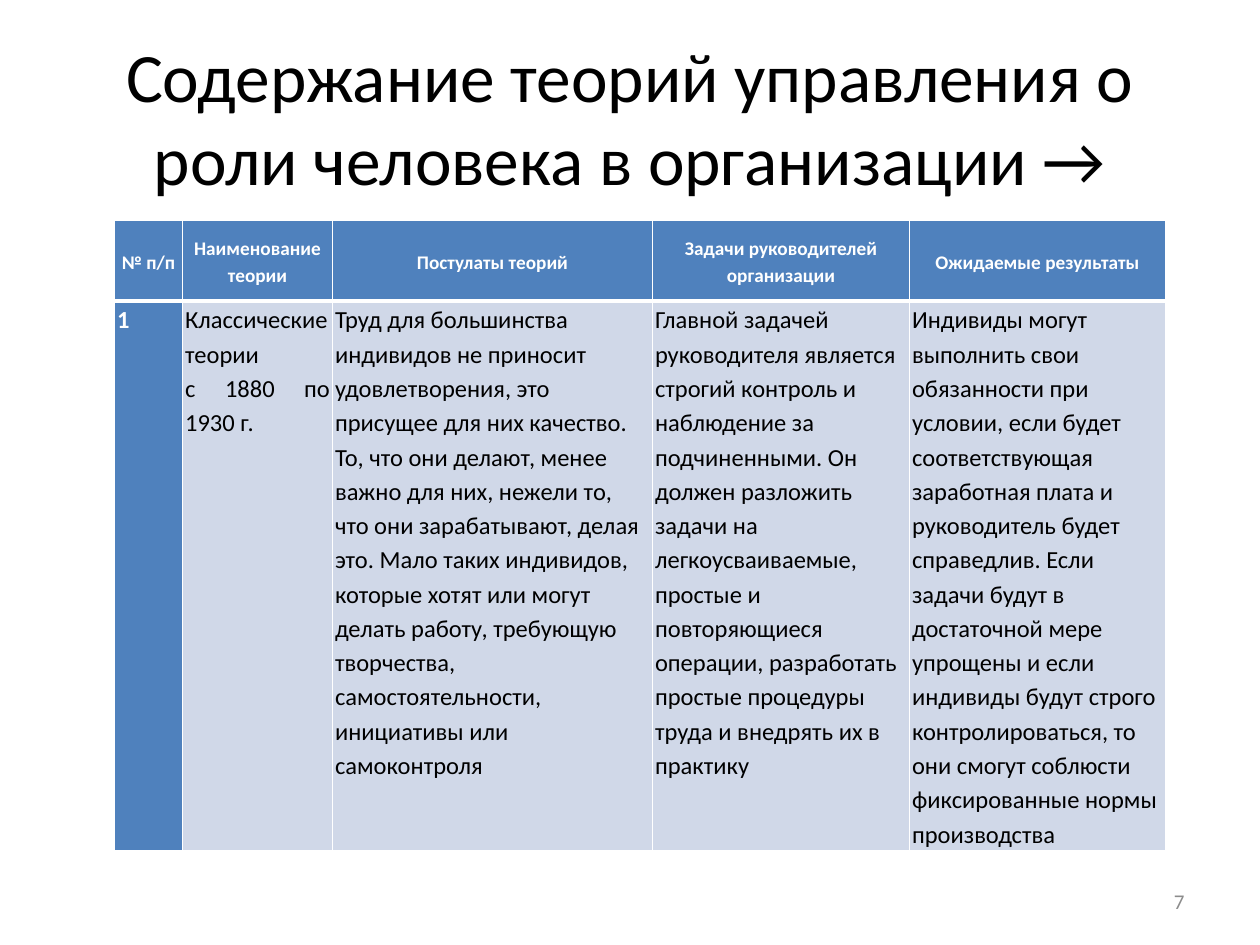
from dataclasses import dataclass

from lxml.etree import SubElement
from pptx import Presentation
from pptx.dml.color import RGBColor
from pptx.enum.text import MSO_ANCHOR, PP_ALIGN
from pptx.oxml.ns import qn
from pptx.slide import Slide
from pptx.table import _Cell
from pptx.text.text import TextFrame
from pptx.util import Inches, Pt

COLORS = {
    "white": "FFFFFF",
    "black": "000000",
    "blue": "4F81BD",
    "pale": "D0D8E8",
    "gray": "8C8C8C",
}
FONT = "Calibri"
WIDTH, HEIGHT = 10, 7.5
MARGIN = 0.05 * WIDTH
COLUMNS = [0.54, 1.19, 2.54, 2.04, 2.03]
ROWS = [0.64, 4.36]
CELL_INSET = 0.02


@dataclass(frozen=True)
class Style:
    size: float
    color: str
    align: PP_ALIGN
    anchor: MSO_ANCHOR = MSO_ANCHOR.MIDDLE
    bold: bool = False
    spacing: float = 1.0


@dataclass(frozen=True)
class CellSpec:
    text: str
    style: Style
    fill: str


TITLE = Style(39.6, "black", PP_ALIGN.CENTER)
NUMBER = Style(12, "gray", PP_ALIGN.RIGHT)
HEADER = Style(11, "white", PP_ALIGN.CENTER, bold=True, spacing=1.15)
INDEX = Style(14, "white", PP_ALIGN.JUSTIFY, MSO_ANCHOR.TOP, True, 1.15)
NAME = Style(14, "black", PP_ALIGN.JUSTIFY, MSO_ANCHOR.TOP, spacing=1.15)
BODY = Style(14, "black", PP_ALIGN.LEFT, MSO_ANCHOR.TOP, spacing=1.15)

HEADINGS = [
    "№ п/п",
    "Наименование теории",
    "Постулаты теорий",
    "Задачи руководителей организации",
    "Ожидаемые результаты",
]
THEORY = [
    CellSpec("1", INDEX, "blue"),
    CellSpec("Классические теории\nс 1880 по 1930 г.", NAME, "pale"),
    CellSpec(
        "Труд для большинства индивидов не приносит удовлетворения, "
        "это присущее для них качество. То, что они делают, менее важно "
        "для них, нежели то, что они зарабатывают, делая это. Мало таких "
        "индивидов, которые хотят или могут делать работу, требующую "
        "творчества, самостоятельности, инициативы или самоконтроля",
        BODY, "pale",
    ),
    CellSpec(
        "Главной задачей руководителя является строгий контроль и "
        "наблюдение за подчиненными. Он должен разложить задачи на "
        "легкоусваиваемые, простые и повторяющиеся операции, разработать "
        "простые процедуры труда и внедрять их в практику",
        BODY, "pale",
    ),
    CellSpec(
        "Индивиды могут выполнить свои обязанности при условии, если будет "
        "соответствующая заработная плата и руководитель будет справедлив. "
        "Если задачи будут в достаточной мере упрощены и если индивиды "
        "будут строго контролироваться, то они смогут соблюсти "
        "фиксированные нормы производства",
        BODY, "pale",
    ),
]
GRID = [[CellSpec(text, HEADER, "blue") for text in HEADINGS], THEORY]


def rgb(name: str) -> RGBColor:
    return RGBColor.from_string(COLORS[name])


def write(tf: TextFrame, text: str, style: Style) -> None:
    tf.text = text
    tf.word_wrap = True
    tf.vertical_anchor = style.anchor
    for p in tf.paragraphs:
        p.alignment = style.align
        p.line_spacing = style.spacing
        for r in p.runs:
            r.font.name = FONT
            r.font.size = Pt(style.size)
            r.font.bold = style.bold
            r.font.color.rgb = rgb(style.color)


def add_text(s: Slide, text: str, style: Style, left: float, top: float,
             width: float, height: float) -> None:
    sp = s.shapes.add_textbox(*map(Inches, (left, top, width, height)))
    write(sp.text_frame, text, style)


def add_borders(cell: _Cell, top: int, bottom: int) -> None:
    tc_pr = cell._tc.get_or_add_tcPr()
    for side, width in (("L", 1), ("R", 1), ("T", top), ("B", bottom)):
        ln = SubElement(tc_pr, qn(f"a:ln{side}"), w=str(Pt(width)))
        fill = SubElement(ln, qn("a:solidFill"))
        SubElement(fill, qn("a:srgbClr"), val=COLORS["white"])


def fill_cell(cell: _Cell, spec: CellSpec, top: int, bottom: int) -> None:
    write(cell.text_frame, spec.text, spec.style)
    cell.vertical_anchor = spec.style.anchor
    cell.margin_left = cell.margin_right = Inches(CELL_INSET)
    cell.margin_top = cell.margin_bottom = 0
    add_borders(cell, top, bottom)
    cell.fill.solid()
    cell.fill.fore_color.rgb = rgb(spec.fill)


def add_theories(s: Slide, left: float, top: float) -> None:
    table = s.shapes.add_table(
        len(ROWS), len(COLUMNS), Inches(left), Inches(top),
        Inches(sum(COLUMNS)), Inches(sum(ROWS)),
    ).table
    table.horz_banding = False
    for column, width in zip(table.columns, COLUMNS):
        column.width = Inches(width)
    for row, height in zip(table.rows, ROWS):
        row.height = Inches(height)
    rules = [1, 3, 1]
    for i, specs in enumerate(GRID):
        for j, spec in enumerate(specs):
            fill_cell(table.cell(i, j), spec, rules[i], rules[i + 1])


def main() -> None:
    prs = Presentation()
    prs.slide_width, prs.slide_height = Inches(WIDTH), Inches(HEIGHT)
    s = prs.slides.add_slide(prs.slide_layouts[6])
    add_text(s, "Содержание теорий управления о роли человека в организации →",
             TITLE, MARGIN, 0.04 * HEIGHT, WIDTH - 2 * MARGIN, HEIGHT / 6)
    add_theories(s, 0.91, 1.75)
    number_width = 2.33
    add_text(s, "7", NUMBER, WIDTH - MARGIN - number_width, 6.95,
             number_width, 0.4)
    prs.save("out.pptx")


if __name__ == "__main__":
    main()
